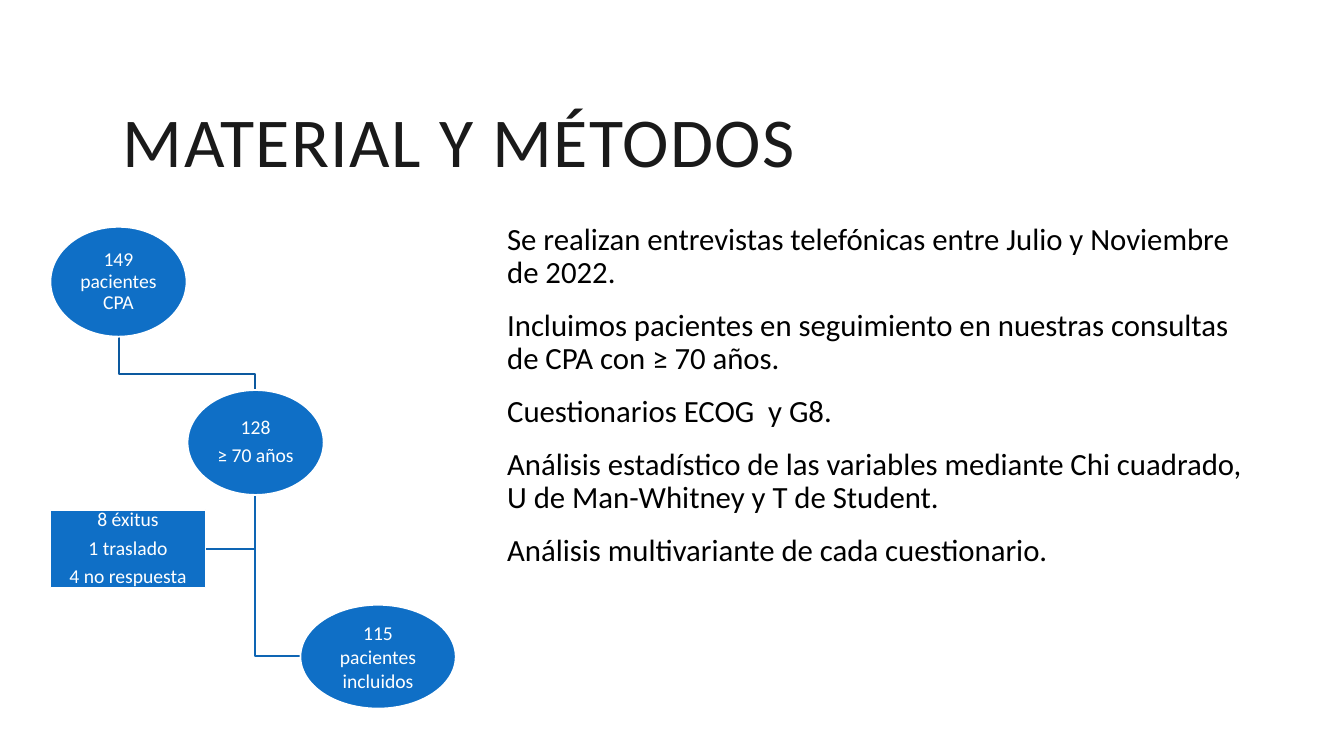
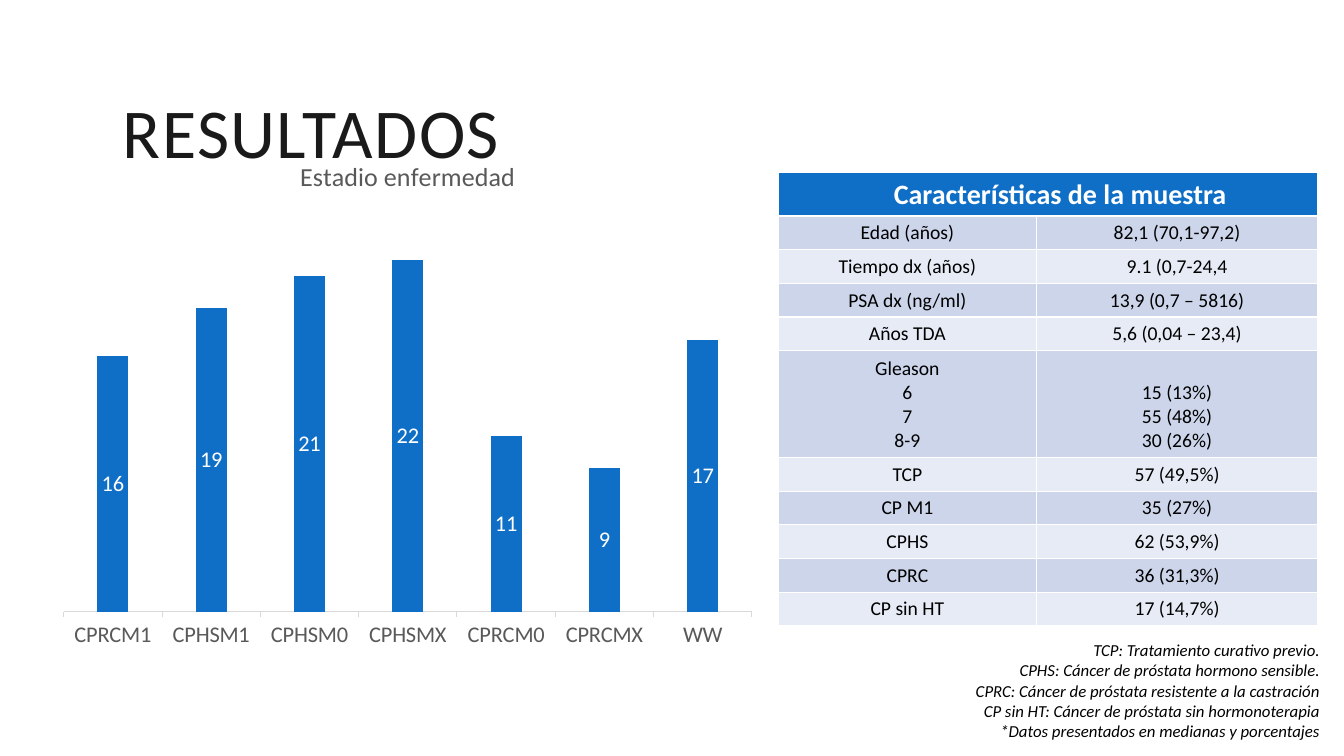
from pptx import Presentation
from pptx.chart.data import CategoryChartData
from pptx.dml.color import RGBColor
from pptx.enum.chart import XL_CHART_TYPE as CT, XL_LABEL_POSITION as LP, XL_TICK_MARK as TM
from pptx.enum.shapes import MSO_SHAPE as SH
from pptx.enum.text import MSO_ANCHOR as MA, PP_ALIGN as AL
from pptx.util import Inches, Pt

BLUE = RGBColor(0x0F, 0x6F, 0xC6)
LINE_BLUE = RGBColor(0x0E, 0x65, 0xB4)
LINE_DARK = RGBColor(0x0C, 0x59, 0x9F)
INK = RGBColor(0x1A, 0x1A, 0x1A)
BLACK = RGBColor(0, 0, 0)
WHITE = RGBColor(0xFF, 0xFF, 0xFF)
GRAY = RGBColor(0x59, 0x59, 0x59)
AXIS = RGBColor(0xD9, 0xD9, 0xD9)
BANDS = (RGBColor(0xCC, 0xD5, 0xEA), RGBColor(0xE7, 0xEB, 0xF5))


def apply(obj, values):
    for name, value in values.items():
        setattr(obj, name, value)


class Deck:
    FONT = "Calibri"

    def __init__(self):
        self.prs = Presentation()
        self.prs.slide_width, self.prs.slide_height = Inches(13.33), Inches(7.5)
        self.s = None

    def slide(self, title, top):
        self.s = self.prs.slides.add_slide(self.prs.slide_layouts[6])
        tf = self.text((1.12, top, 10.63, 1.64), [title], 50, INK, anchor=MA.MIDDLE,
                       para={"line_spacing": 0.8})
        tf.paragraphs[0].runs[0]._r.get_or_add_rPr().set("spc", "100")

    def font(self, font, size, color, **extra):
        apply(font, {"name": self.FONT, "size": Pt(size), **extra})
        font.color.rgb = color

    def fill_text(self, tf, lines, size, color, para=None, **font):
        for i, line in enumerate(lines):
            p = tf.add_paragraph() if i else tf.paragraphs[0]
            apply(p, para or {})
            r = p.add_run()
            r.text = line
            self.font(r.font, size, color, **font)

    def text(self, box, lines, size, color, anchor=MA.TOP, margins=None, para=None, **font):
        tf = self.s.shapes.add_textbox(*map(Inches, box)).text_frame
        apply(tf, {"word_wrap": True, "vertical_anchor": anchor, **(margins or {})})
        self.fill_text(tf, lines, size, color, para, **font)
        return tf

    def node(self, kind, box, lines, para):
        sp = self.s.shapes.add_shape(kind, *map(Inches, box))
        sp.shadow.inherit = False
        sp.fill.solid()
        sp.fill.fore_color.rgb = BLUE
        sp.line.color.rgb = WHITE
        sp.line.width = Pt(1.25)
        sides = ("left", "top", "right", "bottom")
        apply(sp.text_frame, {f"margin_{side}": Inches(0.01) for side in sides})
        apply(sp.text_frame, {"word_wrap": True, "vertical_anchor": MA.MIDDLE})
        self.fill_text(sp.text_frame, lines, 14, WHITE, {"alignment": AL.CENTER, **para})

    def branch(self, points, color):
        start, *rest = [(Inches(x), Inches(y)) for x, y in points]
        builder = self.s.shapes.build_freeform(*start)
        builder.add_line_segments(rest, close=False)
        sp = builder.convert_to_shape()
        sp.shadow.inherit = False
        sp.fill.background()
        sp.line.color.rgb = color
        sp.line.width = Pt(1.25)

    def cell(self, cell, lines, fill, size, color, anchor, **font):
        cell.fill.solid()
        cell.fill.fore_color.rgb = fill
        cell.vertical_anchor = anchor
        self.fill_text(cell.text_frame, lines, size, color, {"alignment": AL.CENTER}, **font)

    def table(self, box, widths, header, rows):
        tbl = self.s.shapes.add_table(len(rows) + 1, len(widths), *map(Inches, box)).table
        for col, width in zip(tbl.columns, widths):
            col.width = Inches(width)
        head = tbl.cell(0, 0)
        head.merge(tbl.cell(0, len(widths) - 1))
        head.margin_left = Inches(0.34)
        tbl.rows[0].height = Inches(0.41)
        self.cell(head, [header], BLUE, 20, WHITE, MA.TOP, bold=True)
        for i, row in enumerate(rows, 1):
            multiline = "\n" in row[0]
            tbl.rows[i].height = Inches(1.06 if multiline else 0.33)
            for j, value in enumerate(row):
                self.cell(tbl.cell(i, j), value.split("\n"), BANDS[(i - 1) % 2], 14, BLACK,
                          MA.BOTTOM if multiline else MA.MIDDLE)

    def columns(self, box, title, values):
        data = CategoryChartData()
        data.categories = list(values)
        data.add_series(title, list(values.values()))
        chart = self.s.shapes.add_chart(CT.COLUMN_CLUSTERED, *map(Inches, box), data).chart
        self.font(chart.font, 10, BLACK)
        chart.has_legend = False
        tf = chart.chart_title.text_frame
        self.fill_text(tf, [title], 18.6, GRAY, bold=False)
        chart.chart_title.include_in_layout = False
        apply(chart.value_axis, {"visible": False, "has_major_gridlines": False,
                                 "minimum_scale": 0, "maximum_scale": 25})
        axis = chart.category_axis
        axis.major_tick_mark = TM.OUTSIDE
        axis.format.line.color.rgb = AXIS
        axis.format.line.width = Pt(0.75)
        self.font(axis.tick_labels.font, 16, GRAY)
        plot = chart.plots[0]
        apply(plot, {"gap_width": 219, "overlap": -27, "vary_by_categories": False,
                     "has_data_labels": True})
        apply(plot.data_labels, {"show_value": True, "position": LP.CENTER})
        self.font(plot.data_labels.font, 16, WHITE)
        fill = plot.series[0].format.fill
        fill.solid()
        fill.fore_color.rgb = BLUE


def methods(deck):
    deck.slide("MATERIAL Y MÉTODOS", 0.64)
    deck.text((4.88, 2.17, 7.49, 4.4), [
        "Se realizan entrevistas telefónicas entre Julio y Noviembre de 2022.",
        "Incluimos pacientes en seguimiento en nuestras consultas de CPA con ≥ 70 años.",
        "Cuestionarios ECOG  y G8.",
        "Análisis estadístico de las variables mediante Chi cuadrado, "
        "U de Man-Whitney y T de Student.",
        "Análisis multivariante de cada cuestionario.",
    ], 22, BLACK,
        margins={"margin_left": Inches(0.15), "margin_top": Inches(0.05),
                 "margin_right": Inches(0.05), "margin_bottom": Inches(0.05)},
        para={"line_spacing": 0.9, "space_before": Pt(12), "space_after": Pt(2)})

    deck.branch([(2.53, 4.91), (2.53, 5.45), (2.04, 5.45)], LINE_BLUE)
    deck.branch([(2.53, 4.91), (2.53, 6.51), (2.98, 6.51)], LINE_BLUE)
    deck.branch([(1.18, 3.33), (1.18, 3.71), (2.53, 3.71), (2.53, 3.87)], LINE_DARK)

    tight = {"line_spacing": 0.9, "space_after": Pt(5)}
    for kind, box, lines, para in (
        (SH.OVAL, (0.5, 2.25, 1.35, 1.09), ["149 pacientes CPA"], tight),
        (SH.OVAL, (1.86, 3.87, 1.35, 1.04), ["128", "≥ 70 años"], tight),
        (SH.OVAL, (2.98, 6, 1.54, 1.03), ["115 pacientes incluidos"], {}),
        (SH.RECTANGLE, (0.5, 5.06, 1.54, 0.77),
         ["8 éxitus", "1 traslado", "4 no respuesta"], tight),
    ):
        deck.node(kind, box, lines, para)


def results(deck):
    deck.slide("RESULTADOS", 0.55)
    deck.table((7.72, 1.71, 5.35, 4.49), (2.56, 2.79), "Características de la muestra", [
        ("Edad (años)", "82,1 (70,1-97,2)"),
        ("Tiempo dx (años)", "9.1 (0,7-24,4"),
        ("PSA dx (ng/ml)", "13,9 (0,7 – 5816)"),
        ("Años TDA", "5,6 (0,04 – 23,4)"),
        ("Gleason\n6\n7\n8-9", "15 (13%)\n55 (48%)\n30 (26%)"),
        ("TCP", "57 (49,5%)"),
        ("CP M1", "35 (27%)"),
        ("CPHS", "62 (53,9%)"),
        ("CPRC", "36 (31,3%)"),
        ("CP sin HT", "17 (14,7%)"),
    ])
    deck.text((7.6, 6.3, 5.59, 1.11), [
        "TCP: Tratamiento curativo previo.",
        "CPHS: Cáncer de próstata hormono sensible.",
        "CPRC: Cáncer de próstata resistente a la castración",
        "CP sin HT: Cáncer de próstata sin hormonoterapia",
        "*Datos presentados en medianas y porcentajes",
    ], 12, BLACK, para={"alignment": AL.RIGHT}, italic=True)
    deck.columns((0.49, 1.37, 7.11, 5.17), "Estadio enfermedad", {
        "CPRCM1": 16, "CPHSM1": 19, "CPHSM0": 21, "CPHSMX": 22,
        "CPRCM0": 11, "CPRCMX": 9, "WW": 17,
    })


def main():
    deck = Deck()
    methods(deck)
    results(deck)
    deck.prs.save("out.pptx")


if __name__ == "__main__":
    main()
